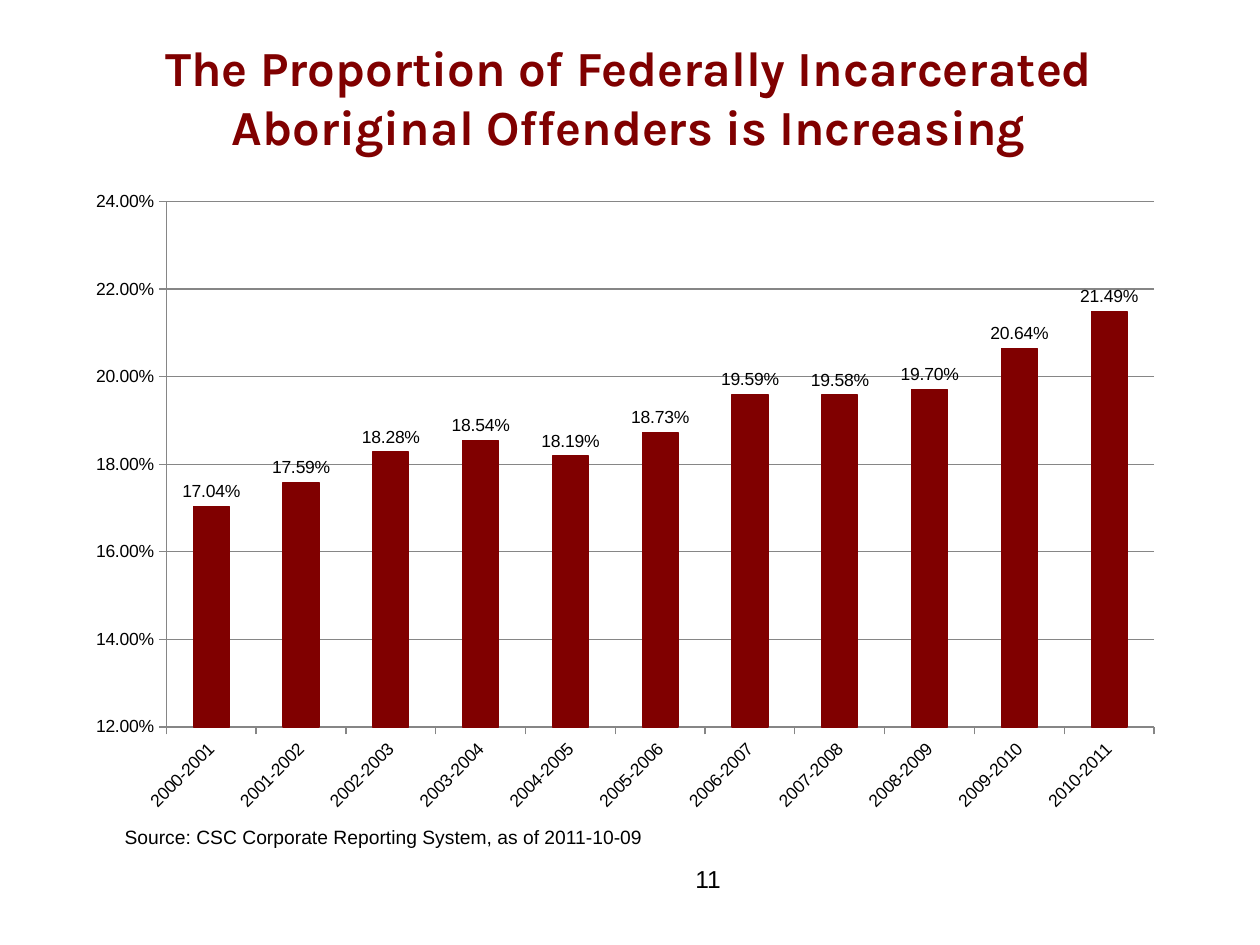
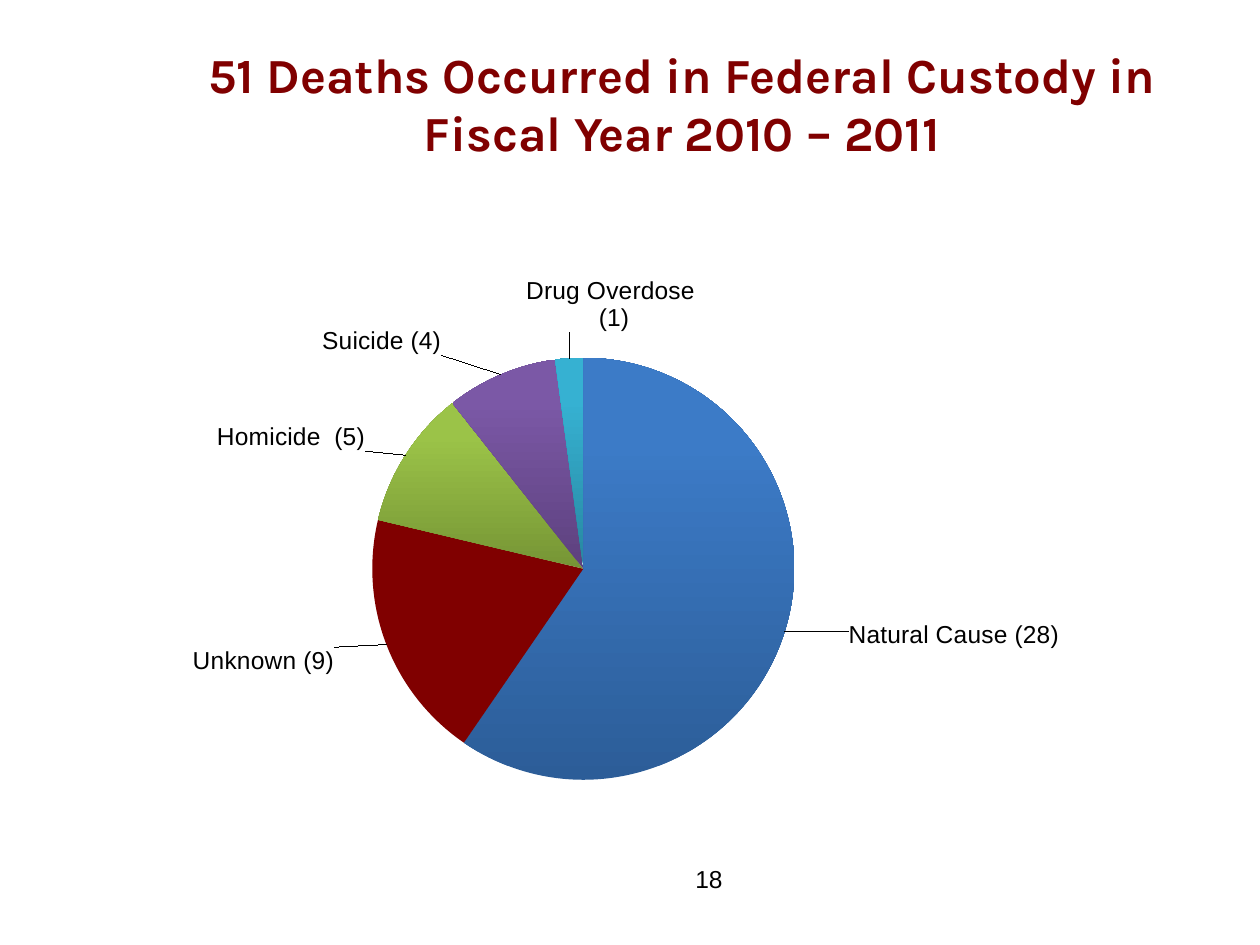
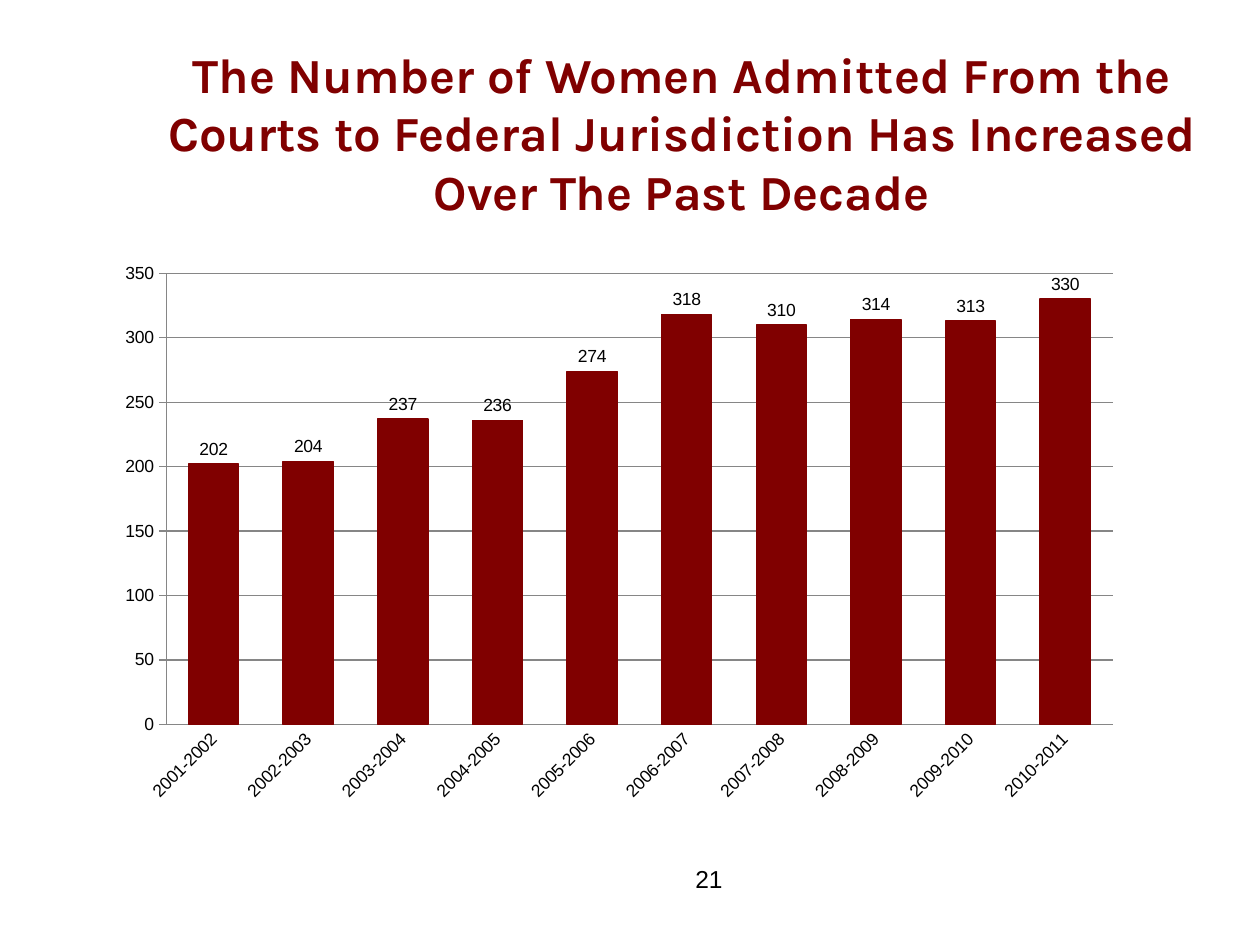
"""Build three correctional statistics slides with native charts."""
import pptx
import pptx.chart.data
import pptx.dml.color
import pptx.enum.chart
import pptx.enum.text
import pptx.oxml
import pptx.oxml.ns
import pptx.util

Inches = pptx.util.Inches
Pt = pptx.util.Pt
RGBColor = pptx.dml.color.RGBColor
XL = pptx.enum.chart
qn = pptx.oxml.ns.qn

MAROON = RGBColor(0x80, 0x00, 0x00)
BLACK = RGBColor(0x00, 0x00, 0x00)
GREY = RGBColor(0x86, 0x86, 0x86)
BLUE = (RGBColor(0x2C, 0x5D, 0x98), RGBColor(0x3C, 0x7B, 0xC7))
GREEN = (RGBColor(0x76, 0x95, 0x35), RGBColor(0x9B, 0xC3, 0x48))
PURPLE = (RGBColor(0x5D, 0x41, 0x7E), RGBColor(0x7B, 0x58, 0xA6))
TEAL = (RGBColor(0x27, 0x87, 0xA0), RGBColor(0x36, 0xB1, 0xD2))

TITLE_FONT = "Karla"
BODY_FONT = "Arial"
NUMBER_BOX = (5.42, 6.81, 2.33, 0.52)


def add_text(s, box, text, size, font=BODY_FONT, color=BLACK, bold=False, centred=False):
    """Add a wrapped one-paragraph text box and return its paragraph."""
    tf = s.shapes.add_textbox(*map(Inches, box)).text_frame
    tf.word_wrap = True
    p = tf.paragraphs[0]
    if centred:
        p.alignment = pptx.enum.text.PP_ALIGN.CENTER
    r = p.add_run()
    r.text = text
    r.font.name = font
    r.font.size = Pt(size)
    r.font.bold = bold
    r.font.color.rgb = color
    return p


def add_frame(prs, title, title_box, number):
    """Add a slide with its title and page number."""
    s = prs.slides.add_slide(prs.slide_layouts[6])
    p = add_text(s, title_box, title, 28, TITLE_FONT, MAROON, True, True)
    p._p.get_or_add_pPr().set("marL", str(Inches(0.82)))
    add_text(s, NUMBER_BOX, number, 14)
    return s


def make_layout(**values):
    """Return a manual chart layout element with the given settings."""
    layout = pptx.oxml.parse_xml(
        f'<c:layout {pptx.oxml.ns.nsdecls("c")}><c:manualLayout/></c:layout>')
    for tag, value in values.items():
        child = layout[0].makeelement(qn("c:" + tag), {"val": str(value)})
        layout[0].append(child)
    return layout


def add_chart(s, kind, box, plot_box, cats, vals, size, fmt="General"):
    """Add a single-series chart whose plot area fills plot_box."""
    data = pptx.chart.data.CategoryChartData(number_format=fmt)
    data.categories = cats
    data.add_series("Series 1", vals)
    chart = s.shapes.add_chart(kind, *map(Inches, box), data).chart
    chart.has_title = False
    chart.has_legend = False
    chart.font.name = BODY_FONT
    chart.font.size = Pt(size)
    chart.font.color.rgb = BLACK
    left, top, width, height = box
    x, y, w, h = plot_box
    area = chart._chartSpace.chart.plotArea
    for old in area.findall(qn("c:layout")):
        area.remove(old)
    area.insert(0, make_layout(
        layoutTarget="inner", xMode="edge", yMode="edge",
        x=(x - left) / width, y=(y - top) / height, w=w / width, h=h / height))
    return chart


def add_columns(s, box, plot_box, cats, vals, gap, cat_tick, fmt="General"):
    """Add a maroon column chart with slanted category labels."""
    chart = add_chart(s, XL.XL_CHART_TYPE.COLUMN_CLUSTERED, box, plot_box,
                      cats, vals, 10, fmt)
    plot = chart.plots[0]
    plot.gap_width = gap
    plot.vary_by_categories = False
    series = plot.series[0]
    series.format.fill.solid()
    series.format.fill.fore_color.rgb = MAROON
    series.format.line.color.rgb = MAROON
    series.format.line.width = Pt(0.75)
    labels = series.data_labels
    labels.show_value = True
    labels.number_format = fmt
    labels.number_format_is_linked = False
    labels.position = XL.XL_LABEL_POSITION.OUTSIDE_END

    cat_axis, val_axis = chart.category_axis, chart.value_axis
    cat_axis.major_tick_mark = cat_tick
    val_axis.major_tick_mark = XL.XL_TICK_MARK.OUTSIDE
    val_axis.has_major_gridlines = True
    val_axis.tick_labels.number_format = fmt
    val_axis.tick_labels.number_format_is_linked = False
    for part in (cat_axis, val_axis, val_axis.major_gridlines):
        part.format.line.color.rgb = GREY
        part.format.line.width = Pt(0.75)
    cat_axis.tick_labels.font.size = Pt(10)
    body = cat_axis._element.find(qn("c:txPr")).find(qn("a:bodyPr"))
    body.set("rot", "-2700000")
    body.set("vert", "horz")
    return chart


def fill_slice(fill, color):
    """Fill a slice with one colour or a dark-to-light upward gradient."""
    if isinstance(color, RGBColor):
        fill.solid()
        fill.fore_color.rgb = color
        return
    fill.gradient()
    fill.gradient_angle = 90
    for stop, shade, position in zip(fill.gradient_stops, color, (0, 0.8)):
        stop.color.rgb = shade
        stop.position = position


def add_pie(s, box, plot_box, slices):
    """Add a pie with offset, custom-worded outside labels."""
    cats, vals, colors, texts, offsets = zip(*slices)
    chart = add_chart(s, XL.XL_CHART_TYPE.PIE, box, plot_box, cats, vals, 14)
    plot = chart.plots[0]
    plot.vary_by_categories = True
    series = plot.series[0]
    labels = series.data_labels
    labels.show_value = labels.show_percentage = labels.show_category_name = True
    labels.position = XL.XL_LABEL_POSITION.OUTSIDE_END
    for i, (color, text) in enumerate(zip(colors, texts)):
        point = series.points[i]
        fill_slice(point.format.fill, color)
        tf = point.data_label.text_frame
        for n, line in enumerate(text.split("\n")):
            p = tf.add_paragraph() if n else tf.paragraphs[0]
            r = p.add_run()
            r.text = line
            r.font.name = BODY_FONT
            r.font.size = Pt(14)
            r.font.color.rgb = BLACK
        point.data_label.position = XL.XL_LABEL_POSITION.OUTSIDE_END
    for label, (dx, dy) in zip(series._element.iter(qn("c:dLbl")), offsets):
        label.find(qn("c:idx")).addnext(make_layout(x=dx, y=dy))


def fiscal_years(first, last):
    """Return fiscal year names from first to last starting year."""
    return [f"{year}-{year + 1}" for year in range(first, last + 1)]


def proportion_slide(prs):
    """Build the slide on the share of Aboriginal offenders."""
    s = add_frame(prs, "The Proportion of Federally Incarcerated Aboriginal "
                  "Offenders is Increasing", (-0.42, 0.25, 10, 1.25), "11")
    shares = (0.1704, 0.1759, 0.1828, 0.1854, 0.1819, 0.1873,
              0.1959, 0.1958, 0.197, 0.2064, 0.2149)
    chart = add_columns(s, (0.58, 1.42, 8.75, 5.12), (1.32, 1.6, 7.84, 4.17),
                        fiscal_years(2000, 2010), shares, 150,
                        XL.XL_TICK_MARK.OUTSIDE, "0.00%")
    axis = chart.value_axis
    axis.minimum_scale, axis.maximum_scale, axis.major_unit = 0.12, 0.24, 0.02
    add_text(s, (0.67, 6.5, 4.75, 0.47),
             "Source: CSC Corporate Reporting System, as of 2011-10-09", 11, centred=True)


def deaths_slide(prs):
    """Build the slide on deaths in custody by cause."""
    s = add_frame(prs, "51 Deaths Occurred in Federal Custody in Fiscal Year "
                  "2010 – 2011", (0.5, 0.3, 9, 1.25), "18")
    slices = (
        ("Natural Cause ", 28, BLUE, "Natural Cause (28)", (0.05, -0.02)),
        ("Unknown Cause", 9, MAROON, "Unknown (9)", (-0.04, 0)),
        ("Homicide ", 5, GREEN, "Homicide  (5)", (-0.03, 0)),
        ("Suicide", 4, PURPLE, "Suicide (4)", (-0.05, -0.02)),
        ("Drug Overdose", 1, TEAL, "Drug Overdose \n(1)", (0.04, -0.03)),
    )
    add_pie(s, (0.5, 1.75, 9, 4.95), (2.51, 2.84, 4.24, 3.35), slices)


def women_slide(prs):
    """Build the slide on women admitted from the courts."""
    s = add_frame(prs, "The Number of Women Admitted From the Courts to Federal "
                  "Jurisdiction Has Increased Over The Past Decade",
                  (0, 0.3, 10, 1.25), "21")
    admissions = (202, 204, 237, 236, 274, 318, 310, 314, 313, 330)
    add_columns(s, (0.83, 2, 8.17, 4.45), (1.32, 2.17, 7.51, 3.58),
                fiscal_years(2001, 2010), admissions, 88, XL.XL_TICK_MARK.NONE)


def main():
    """Build and save the presentation."""
    prs = pptx.Presentation()
    prs.slide_width, prs.slide_height = Inches(10), Inches(7.5)
    proportion_slide(prs)
    deaths_slide(prs)
    women_slide(prs)
    prs.save("out.pptx")


if __name__ == "__main__":
    main()
